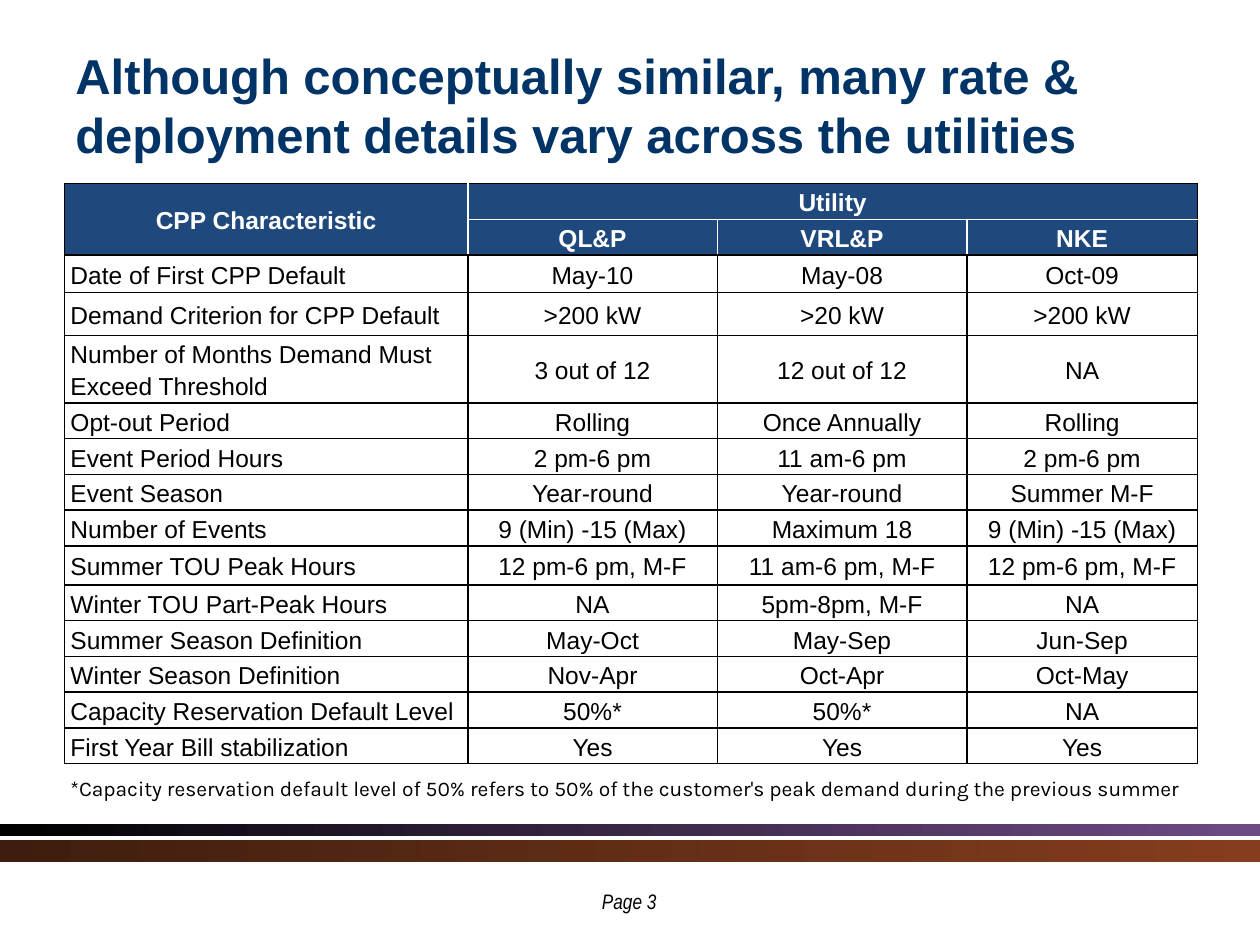
from lxml.etree import SubElement
from pptx import Presentation
from pptx.dml.color import RGBColor
from pptx.enum.shapes import MSO_SHAPE as Shape
from pptx.enum.text import MSO_ANCHOR as Anchor, PP_ALIGN as Align
from pptx.oxml.ns import qn
from pptx.util import Cm, Pt

NAVY, HEADER, BLACK, WHITE = "003366", "1F497D", "000000", "FFFFFF"
HEADER_ROWS = 2
COLUMNS = [8.13, 5.03, 5.03, 4.65]
ROW_HEIGHT = 0.72
TALL_ROWS = {2: 0.76, 3: 0.86, 4: 1.29, 9: 0.79, 15: 0.76}
ROWS = [
    ["CPP Characteristic", "Utility", "", ""],
    ["", "QL&P", "VRL&P", "NKE"],
    ["Date of First CPP Default", "May-10", "May-08", "Oct-09"],
    ["Demand Criterion for CPP Default", ">200 kW", ">20 kW", ">200 kW"],
    ["Number of Months Demand Must Exceed Threshold", "3 out of 12", "12 out of 12", "NA"],
    ["Opt-out Period", "Rolling", "Once Annually", "Rolling"],
    ["Event Period Hours", "2 pm-6 pm", "11 am-6 pm", "2 pm-6 pm"],
    ["Event Season", "Year-round", "Year-round", "Summer M-F"],
    ["Number of Events", "9 (Min) -15 (Max)", "Maximum 18", "9 (Min) -15 (Max)"],
    ["Summer TOU Peak Hours", "12 pm-6 pm, M-F", "11 am-6 pm, M-F", "12 pm-6 pm, M-F"],
    ["Winter TOU Part-Peak Hours", "NA", "5pm-8pm, M-F", "NA"],
    ["Summer Season Definition", "May-Oct", "May-Sep", "Jun-Sep"],
    ["Winter Season Definition", "Nov-Apr", "Oct-Apr", "Oct-May"],
    ["Capacity Reservation Default Level", "50%*", "50%*", "NA"],
    ["First Year Bill stabilization", "Yes", "Yes", "Yes"],
    ["*Capacity reservation default level of 50% refers to 50% of the "
     "customer's peak demand during the previous summer", "", "", ""],
]


def rgb(value):
    return RGBColor.from_string(value)


class Deck:
    font = "Arial"
    border_width = Pt(1)

    def __init__(self, width, height):
        self.prs = Presentation()
        self.prs.slide_width, self.prs.slide_height = Cm(width), Cm(height)
        self.s = self.prs.slides.add_slide(self.prs.slide_layouts[6])

    def run(self, p, text, size, color=BLACK, bold=False, italic=False, font=None, align=Align.LEFT):
        p.alignment = align
        r = p.add_run()
        r.text = text
        r.font.name = font or self.font
        r.font.size = Pt(size)
        r.font.bold, r.font.italic = bold, italic
        r.font.color.rgb = rgb(color)

    def band(self, top, height, start, end, alpha=100):
        sp = self.s.shapes.add_shape(Shape.RECTANGLE, 0, Cm(top), self.prs.slide_width, Cm(height))
        sp.shadow.inherit = False
        sp.line.fill.background()
        sp.fill.gradient()
        sp.fill.gradient_angle = 0
        for stop, color in zip(sp.fill.gradient_stops, (start, end)):
            stop.color.rgb = rgb(color)
        if alpha < 100:
            last = list(sp._element.spPr.iter(qn("a:srgbClr")))[-1]
            SubElement(last, qn("a:alpha"), val=str(alpha * 1000))

    def text(self, left, top, width, height, text, size, anchor=Anchor.TOP, **style):
        tf = self.s.shapes.add_textbox(Cm(left), Cm(top), Cm(width), Cm(height)).text_frame
        tf.word_wrap = True
        tf.vertical_anchor = anchor
        self.run(tf.paragraphs[0], text, size, **style)

    def borders(self, cell, colors):
        tc_pr = cell._tc.get_or_add_tcPr()
        for side, color in zip("LRTB", colors):
            ln = SubElement(tc_pr, qn(f"a:ln{side}"), w=str(self.border_width))
            if color:
                fill = SubElement(ln, qn("a:solidFill"))
                SubElement(fill, qn("a:srgbClr"), val=color)
            else:
                SubElement(ln, qn("a:noFill"))

    def cell(self, cell, row, col, text, last_row, last_col):
        header, note = row < HEADER_ROWS, row == last_row
        if header:
            inner = (col > 0, col + cell.span_width <= last_col,
                     row > 0, row + cell.span_height < HEADER_ROWS)
            colors = [WHITE if side else BLACK for side in inner]
        else:
            colors = [None, None, BLACK, None] if note else [BLACK] * 4
        self.borders(cell, colors)
        if note:
            cell.fill.background()
        else:
            cell.fill.solid()
            cell.fill.fore_color.rgb = rgb(HEADER if header else WHITE)
        cell.margin_left = cell.margin_right = Cm(0.12)
        cell.margin_top = cell.margin_bottom = 0
        cell.vertical_anchor = Anchor.BOTTOM if note else Anchor.MIDDLE
        if not text:
            return
        p = cell.text_frame.paragraphs[0]
        if note:
            p.space_after = Pt(6)
            self.run(p, text, 12, font="Karla")
        else:
            p.line_spacing = 1.15
            self.run(p, text, 14, WHITE if header else BLACK, bold=header,
                     align=Align.CENTER if header or col else Align.LEFT)

    def table(self, left, top, columns, rows, heights, merges):
        table = self.s.shapes.add_table(len(rows), len(columns), Cm(left), Cm(top),
                                        Cm(sum(columns)), Cm(sum(heights))).table
        table.first_row = table.horz_banding = False
        for column, width in zip(table.columns, columns):
            column.width = Cm(width)
        for row, height in zip(table.rows, heights):
            row.height = Cm(height)
        for first, last in merges:
            table.cell(*first).merge(table.cell(*last))
        for r, values in enumerate(rows):
            for c, value in enumerate(values):
                self.cell(table.cell(r, c), r, c, value, len(rows) - 1, len(columns) - 1)


def main():
    deck = Deck(25.4, 19.05)
    deck.band(16.62, 0.22, BLACK, "542D6F", alpha=85)
    deck.band(16.94, 0.43, "3E1D0E", "853D1E")
    deck.text(1.27, 0.76, 23.06, 2.69,
              "Although conceptually similar, many rate & deployment details vary across the utilities",
              28, Anchor.MIDDLE, color=NAVY, bold=True)
    heights = [TALL_ROWS.get(i, ROW_HEIGHT) for i in range(len(ROWS))]
    note = len(ROWS) - 1
    deck.table(1.3, 3.7, COLUMNS, ROWS, heights,
               [((0, 0), (1, 0)), ((0, 1), (0, 3)), ((note, 0), (note, 3))])
    deck.text(9.98, 17.78, 5.41, 0.56, "Page 3", 12,
              italic=True, font="Arial Narrow", align=Align.CENTER)
    deck.prs.save("out.pptx")


if __name__ == "__main__":
    main()
